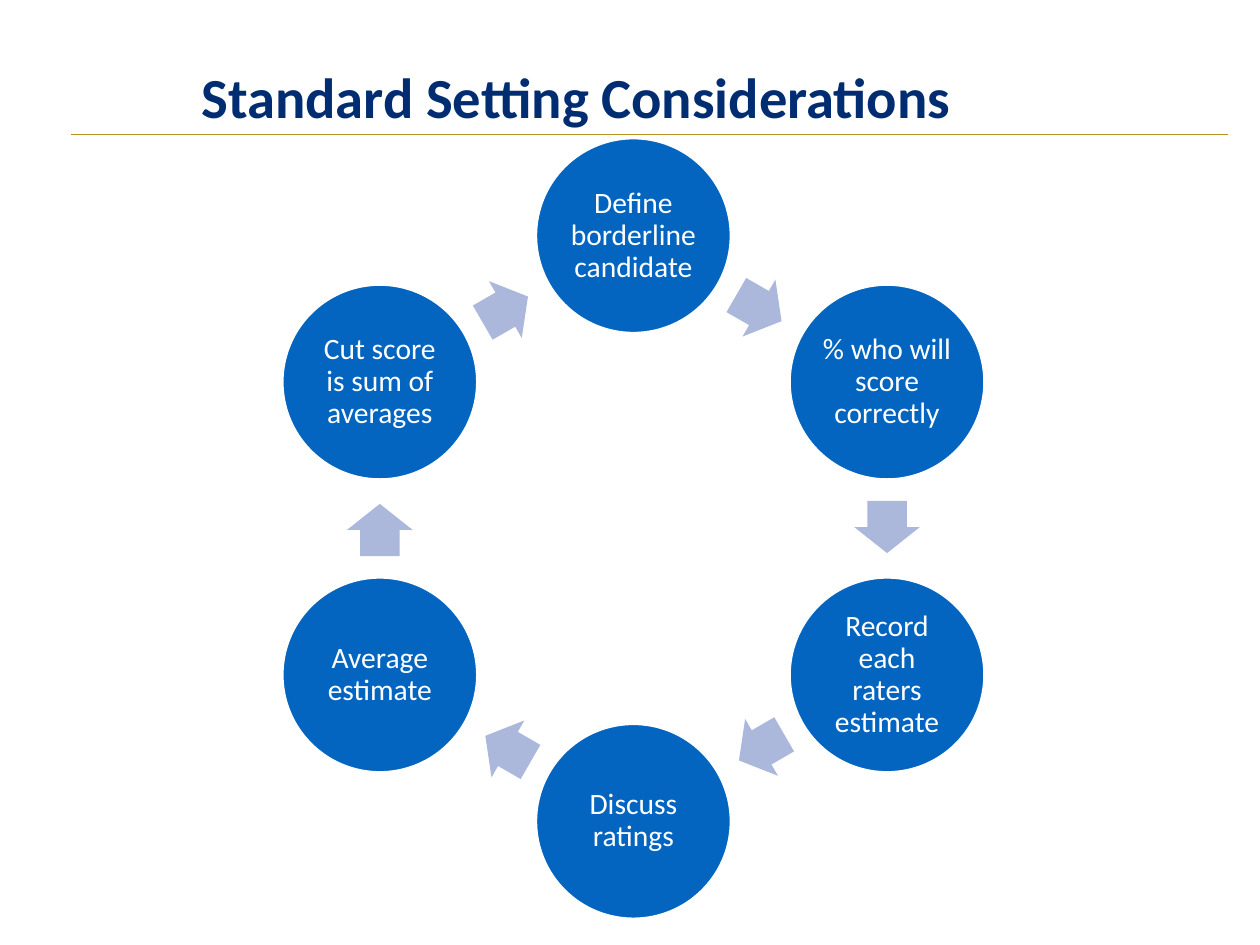
import math

import pptx
import pptx.dml.color
import pptx.enum.shapes
import pptx.enum.text
import pptx.oxml.ns
import pptx.util
from lxml import etree

Pt = pptx.util.Pt
ShapeType = pptx.enum.shapes.MSO_SHAPE
Anchor = pptx.enum.text.MSO_ANCHOR

COLORS = {
    "title": "002D72",
    "rule": "B88F20",
    "circle": "0365C0",
    "arrow": "ABB8DC",
    "white": "FFFFFF",
}


def color(name):
    return pptx.dml.color.RGBColor.from_string(COLORS[name])


def write_text(shape, text, size, color_name, spacing, anchor, inset, bold=False):
    frame = shape.text_frame
    frame.word_wrap = True
    frame.vertical_anchor = anchor
    frame.margin_left = frame.margin_right = Pt(inset)
    frame.margin_top = frame.margin_bottom = Pt(inset)
    paragraph = frame.paragraphs[0]
    paragraph.alignment = pptx.enum.text.PP_ALIGN.CENTER
    paragraph.line_spacing = spacing
    run = paragraph.add_run()
    run.text = text
    run.font.name = "Calibri"
    run.font.size = Pt(size)
    run.font.bold = bold
    run.font.color.rgb = color(color_name)


presentation = pptx.Presentation()
presentation.slide_width = Pt(1024)
presentation.slide_height = Pt(768)
slide = presentation.slides.add_slide(presentation.slide_layouts[6])

rule = slide.shapes.add_connector(
    pptx.enum.shapes.MSO_CONNECTOR.STRAIGHT, Pt(57.6), Pt(109.6), Pt(998), Pt(109.6)
)
rule.line.color.rgb = color("rule")
rule.line.width = Pt(1)
etree.SubElement(rule._element.spPr, pptx.oxml.ns.qn("a:effectLst"))

title = slide.shapes.add_textbox(Pt(56), Pt(-26.6), Pt(824), Pt(131.8))
write_text(title, "Standard Setting Considerations", 46, "title", 0.8, Anchor.BOTTOM, 0, True)

steps = [
    "Define borderline candidate",
    "% who will score correctly",
    "Record each raters estimate",
    "Discuss ratings",
    "Average estimate",
    "Cut score is sum of averages",
]
center_x, center_y = 514.8, 429.5
ring_radius = 238
diameter = 158.4
arrow_length, arrow_height = 42.4, 53.4
arrow_setback = 1.2
step_angle = 360 / len(steps)
arrow_radius = ring_radius * math.cos(math.radians(step_angle / 2))

for index, step in enumerate(steps):
    angle = math.radians(index * step_angle)
    x = center_x + ring_radius * math.sin(angle)
    y = center_y - ring_radius * math.cos(angle)
    circle = slide.shapes.add_shape(
        ShapeType.OVAL, Pt(x - diameter / 2), Pt(y - diameter / 2), Pt(diameter), Pt(diameter)
    )
    circle.shadow.inherit = False
    circle.fill.solid()
    circle.fill.fore_color.rgb = color("circle")
    circle.line.color.rgb = color("white")
    circle.line.width = Pt(2)
    write_text(circle, step, 24, "white", 0.9, Anchor.MIDDLE, 2.2)

    heading = (index + 0.5) * step_angle
    angle = math.radians(heading)
    x = center_x + arrow_radius * math.sin(angle) - arrow_setback * math.cos(angle)
    y = center_y - arrow_radius * math.cos(angle) - arrow_setback * math.sin(angle)
    arrow = slide.shapes.add_shape(
        ShapeType.RIGHT_ARROW,
        Pt(x - arrow_length / 2),
        Pt(y - arrow_height / 2),
        Pt(arrow_length),
        Pt(arrow_height),
    )
    arrow.adjustments[0] = 0.6
    arrow.adjustments[1] = 0.5
    arrow.rotation = heading
    arrow.shadow.inherit = False
    arrow.fill.solid()
    arrow.fill.fore_color.rgb = color("arrow")
    arrow.line.fill.background()

presentation.save("out.pptx")
